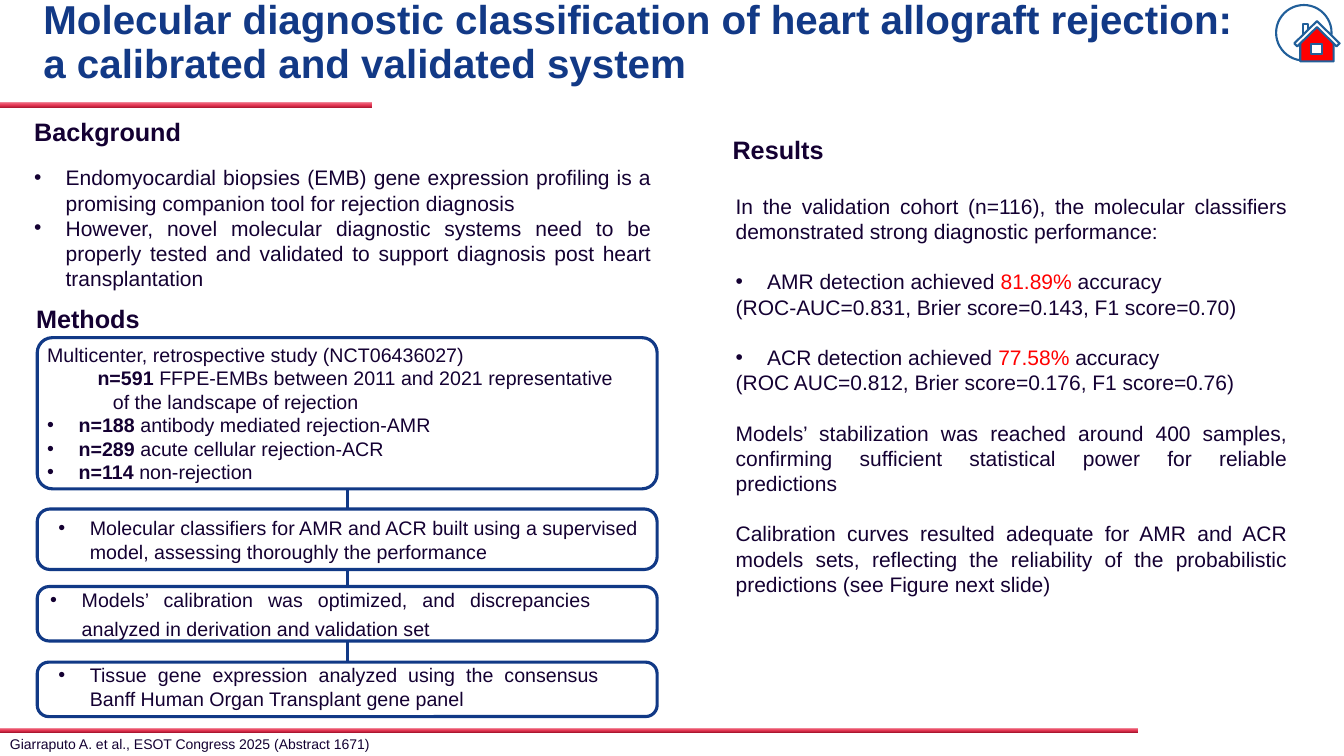
from copy import deepcopy
from dataclasses import dataclass

from lxml import etree
from pptx import Presentation
from pptx.dml.color import RGBColor
from pptx.enum.shapes import MSO_CONNECTOR, MSO_SHAPE
from pptx.enum.text import PP_ALIGN
from pptx.oxml.ns import qn
from pptx.util import Pt

LEFT, JUSTIFY = PP_ALIGN.LEFT, PP_ALIGN.JUSTIFY
RECTANGLE, ROUNDED = MSO_SHAPE.RECTANGLE, MSO_SHAPE.ROUNDED_RECTANGLE
OVAL, STRAIGHT = MSO_SHAPE.OVAL, MSO_CONNECTOR.STRAIGHT


@dataclass(frozen=True)
class Theme:
    font: str = "Arial"
    title: RGBColor = RGBColor(0x12, 0x39, 0x86)
    text: RGBColor = RGBColor(0x14, 0x00, 0x32)
    red: RGBColor = RGBColor(0xFF, 0x00, 0x00)
    white: RGBColor = RGBColor(0xFF, 0xFF, 0xFF)
    card: RGBColor = RGBColor(0x11, 0x39, 0x86)
    icon: RGBColor = RGBColor(0x21, 0x5F, 0x9A)
    bar: tuple = (
        (0, RGBColor(0xA7, 0x14, 0x2D)),
        (0.48, RGBColor(0xE7, 0x38, 0x55)),
        (1, RGBColor(0xF0, 0x84, 0x96)),
    )
    title_size: float = 28.8
    heading_size: float = 18
    body_size: float = 15
    step_size: float = 14
    footer_size: float = 10


theme = Theme()
presentation = Presentation()
presentation.slide_width, presentation.slide_height = Pt(960), Pt(540)
slide = presentation.slides.add_slide(presentation.slide_layouts[6])
shapes = slide.shapes


def add_text(box, paragraphs, size, bold=False, align=JUSTIFY, color=theme.text):
    """Each paragraph is (runs, bulleted, space before); a run is (text, bold, colour)."""
    frame = shapes.add_textbox(*map(Pt, box)).text_frame
    frame.word_wrap = True
    for index, (runs, bulleted, space_before) in enumerate(paragraphs):
        paragraph = frame.paragraphs[0] if index == 0 else frame.add_paragraph()
        paragraph.alignment = align
        if space_before:
            paragraph.space_before = Pt(space_before)
        if bulleted:
            properties = paragraph._p.get_or_add_pPr()
            properties.set("marL", str(Pt(22.5)))
            properties.set("indent", str(-Pt(22.5)))
            etree.SubElement(properties, qn("a:buFont")).set("typeface", theme.font)
            etree.SubElement(properties, qn("a:buChar")).set("char", "•")
        font = paragraph.font
        font.name, font.size, font.bold = theme.font, Pt(size), bold
        font.color.rgb = color
        for text, run_bold, run_color in runs:
            run = paragraph.add_run()
            run.text = text
            if run_bold:
                run.font.bold = True
            if run_color:
                run.font.color.rgb = run_color
    return frame


def style_outline(shape, color, width, fill=None):
    shape.shadow.inherit = False
    shape.line.color.rgb, shape.line.width = color, Pt(width)
    if fill is None:
        shape.fill.background()
    else:
        shape.fill.solid()
        shape.fill.fore_color.rgb = fill


# Title and the two red bars
title = "Molecular diagnostic classification of heart allograft rejection: a calibrated and validated system"
frame = add_text((31, 0, 864, 62), [([(title, False, None)], False, 0)],
                 theme.title_size, True, LEFT, theme.title)
frame.margin_left = frame.margin_right = frame.margin_top = frame.margin_bottom = 0
frame.paragraphs[0].line_spacing = 0.9

for top, width, height in ((72.7, 265.7, 4.5), (519.8, 812.9, 3.6)):
    bar = shapes.add_shape(RECTANGLE, 0, Pt(top), Pt(width), Pt(height))
    bar.shadow.inherit = False
    bar.line.fill.background()
    bar.fill.gradient()
    bar.fill.gradient_angle = 90
    stop_list = next(bar._element.iter(qn("a:gsLst")))
    stop_list.append(deepcopy(stop_list[0]))
    for stop, (position, color) in zip(bar.fill.gradient_stops, theme.bar):
        stop.position = position
        stop.color.rgb = color

# House icon
house_walls = [(941, 18), (952.6, 28.1), (952.6, 43.9), (928.8, 43.9), (928.8, 28.1)]
house_roof = [(940.7, 15.1), (956.9, 31), (954.7, 33.1), (940.7, 19.4), (926.6, 33.1), (924.5, 31)]
icon_parts = [
    (OVAL, (911.5, 3.6, 39.6, 39.6), None),
    (RECTANGLE, (931, 17.3, 3.6, 10.1), theme.white),
    (None, house_walls, theme.red),
    (RECTANGLE, (936.7, 31.7, 7.9, 7.2), theme.white),
    (None, house_roof, theme.white),
]
for kind, geometry, fill in icon_parts:
    if kind is None:
        points = [(Pt(x), Pt(y)) for x, y in geometry]
        builder = shapes.build_freeform(*points[0])
        builder.add_line_segments(points[1:], close=True)
        part = builder.convert_to_shape()
    else:
        part = shapes.add_shape(kind, *map(Pt, geometry))
    style_outline(part, theme.icon, 1.5, fill)

# Method cards, joined from top to bottom
cards = ((241.2, 108, 0.1), (363.6, 43.2, 0.21), (419, 38.9, 0.22), (473, 38.9, 0.21))
previous_bottom = None
for top, height, corner in cards:
    card = shapes.add_shape(ROUNDED, Pt(26.6), Pt(top), Pt(442.8), Pt(height))
    card.adjustments[0] = corner
    style_outline(card, theme.card, 2.25)
    if previous_bottom is not None:
        link = shapes.add_connector(STRAIGHT, Pt(248.4), Pt(previous_bottom), Pt(248.4), Pt(top))
        link.line.color.rgb, link.line.width = theme.card, Pt(2.25)
        etree.SubElement(link._element.spPr, qn("a:effectLst"))
    previous_bottom = top + height

# Headings
for heading, left, top in (("Background", 17.3, 79.2), ("Methods", 18.7, 213.1), ("Results", 516.2, 92.2)):
    add_text((left, top, 420, 29), [([(heading, False, None)], False, 0)],
             theme.heading_size, True, LEFT)

# Background
background = (
    "Endomyocardial biopsies (EMB) gene expression profiling is a promising companion tool for rejection diagnosis",
    "However, novel molecular diagnostic systems need to be properly tested and validated to support diagnosis post heart transplantation",
)
add_text((17.3, 114.2, 455, 97), [([(text, False, None)], True, 0) for text in background],
         theme.body_size)

# Methods
study = [
    ([("Multicenter, retrospective study (NCT06436027)", False, None)], False, 0),
    ([("n=591 ", True, None),
      ("FFPE-EMBs between 2011 and 2021 representative of the landscape of rejection", False, None)], False, 0),
]
for count, group in (("n=188 ", "antibody mediated rejection-AMR"),
                     ("n=289 ", "acute cellular rejection-ACR"),
                     ("n=114 ", "non-rejection")):
    study.append(([(count, True, None), (group, False, None)], True, 0))
frame = add_text((26.6, 241.2, 427, 108.7), study, theme.step_size, align=LEFT)
biopsies = frame.paragraphs[1]._p.get_or_add_pPr()
biopsies.set("marL", str(Pt(47)))
biopsies.set("indent", str(-Pt(11)))

steps = (
    ((34.6, 365, 434.9, 41), LEFT, 1,
     "Molecular classifiers for AMR and ACR built using a supervised model, assessing thoroughly the performance"),
    ((28.8, 412.2, 400.3, 49), JUSTIFY, 1.24,
     "Models’ calibration was optimized, and discrepancies analyzed in derivation and validation set"),
    ((34.6, 470.2, 400.3, 41), JUSTIFY, 1,
     "Tissue gene expression analyzed using the consensus Banff Human Organ Transplant gene panel"),
)
for box, align, line_spacing, text in steps:
    frame = add_text(box, [([(text, False, None)], True, 0)], theme.step_size, align=align)
    frame.paragraphs[0].line_spacing = line_spacing

# Results
gap = 18
results = [([("In the validation cohort (n=116), the molecular classifiers demonstrated strong diagnostic performance:",
              False, None)], False, 0)]
for detection, accuracy, scores in (
    ("AMR", "81.89%", "(ROC-AUC=0.831, Brier score=0.143, F1 score=0.70)"),
    ("ACR", "77.58%", "(ROC AUC=0.812, Brier score=0.176, F1 score=0.76)"),
):
    results.append(([(f"{detection} detection achieved ", False, None), (accuracy, False, theme.red),
                     (" accuracy", False, None)], True, gap))
    results.append(([(scores, False, None)], False, 0))
for conclusion in (
    "Models’ stabilization was reached around 400 samples, confirming sufficient statistical power for reliable predictions",
    "Calibration curves resulted adequate for AMR and ACR models sets, reflecting the reliability of the probabilistic predictions (see Figure next slide)",
):
    results.append(([(conclusion, False, None)], False, gap))
add_text((518.4, 134.6, 408.2, 298), results, theme.body_size)

# Source line
citation = "Giarraputo A. et al., ESOT Congress 2025 (Abstract 1671)"
add_text((0, 522, 480, 18), [([(citation, False, None)], False, 0)], theme.footer_size, align=LEFT)

presentation.save("out.pptx")
